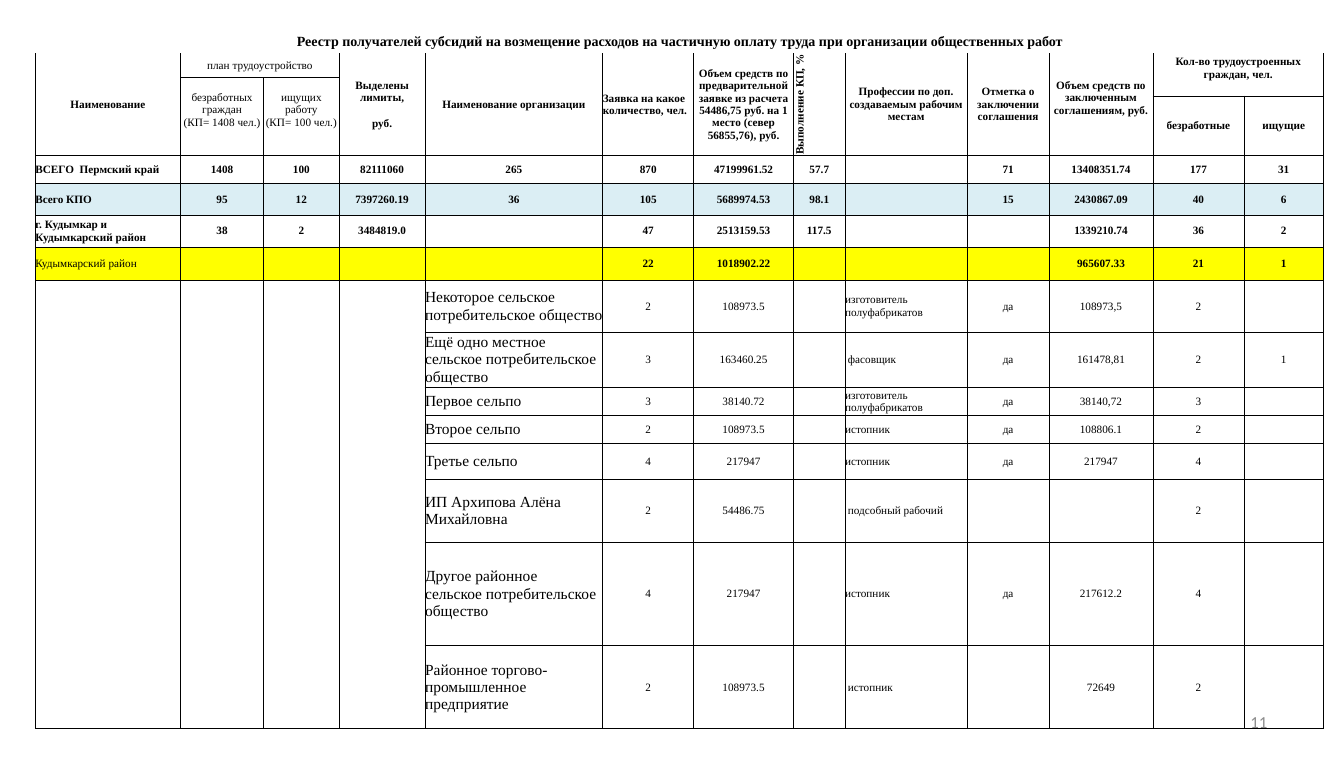
from lxml import etree
from pptx import Presentation, util as u
from pptx.dml.color import RGBColor
from pptx.enum import text
from pptx.oxml import ns

SLIDE = (13.31, 7.5)
TABLE_AT = (0.35, 0.29)
COLS = [1.44, .82, .75, .85, 1.76, .9, .99, .51, 1.21, .81, 1.03, .9, .79]
ROWS = [.24, .24, .18, .59, .28, .31, .32, .33,
        .51, .51, .28, .27, .36, .62, 1.03, .82]
TITLE = ("Реестр получателей субсидий на возмещение расходов на частичную "
         "оплату труда при организации общественных работ")
# row, column, rows spanned, columns spanned, wording, extra format
HEADER = [
    (0, 0, 1, 13, TITLE, {"size": 10}),
    (1, 0, 3, 1, "Наименование", {}),
    (1, 1, 1, 2, "план трудоустройство", {"bold": False}),
    (1, 3, 3, 1, "Выделены лимиты,\nруб.", {"gap": 9.3}),
    (1, 4, 3, 1, "Наименование организации", {}),
    (1, 5, 3, 1, "Заявка на какое количество, чел.", {"left": True}),
    (1, 6, 3, 1, "Объем средств по предварительной заявке из расчета "
                 "54486,75 руб. на 1 место (север 56855,76), руб.", {}),
    (1, 7, 3, 1, "Выполнение КП, %", {"vert": "vert270"}),
    (1, 8, 3, 1, "Профессии по доп. создаваемым рабочим местам", {}),
    (1, 9, 3, 1, "Отметка о заключении соглашения", {}),
    (1, 10, 3, 1, "Объем средств по заключенным соглашениям, руб.",
     {"below": .13}),
    (1, 11, 2, 2, "Кол-во трудоустроенных граждан, чел.", {"below": .13}),
    (2, 1, 2, 1, "безработных граждан\n(КП= 1408 чел.)",
     {"bold": False, "below": .13}),
    (2, 2, 2, 1, "ищущих работу\n(КП= 100 чел.)",
     {"bold": False, "below": .13}),
    (3, 11, 1, 1, "безработные", {}),
    (3, 12, 1, 1, "ищущие", {}),
]
TOTALS = [
    ("ВСЕГО  Пермский край", "1408", "100", "82111060", "265", "870",
     "47199961.52", "57.7", "", "71", "13408351.74", "177", "31"),
    ("Всего КПО", "95", "12", "7397260.19", "36", "105",
     "5689974.53", "98.1", "", "15", "2430867.09", "40", "6"),
    ("г. Кудымкар и Кудымкарский район", "38", "2", "3484819.0", "", "47",
     "2513159.53", "117.5", "", "", "1339210.74", "36", "2"),
    ("Кудымкарский район", "", "", "", "", "22",
     "1018902.22", "", "", "", "965607.33", "21", "1"),
]
EMPLOYERS = [
    ("Некоторое сельское потребительское общество", "2", "108973.5", "",
     "изготовитель полуфабрикатов", "да", "108973,5", "2", ""),
    ("Ещё одно местное сельское потребительское общество", "3", "163460.25",
     "", " фасовщик", "да", "161478,81", "2", "1"),
    ("Первое сельпо", "3", "38140.72", "",
     "изготовитель полуфабрикатов", "да", "38140,72", "3", ""),
    ("Второе сельпо", "2", "108973.5", "",
     "истопник", "да", "108806.1", "2", ""),
    ("Третье сельпо", "4", "217947", "",
     "истопник", "да", "217947", "4", ""),
    ("ИП Архипова Алёна Михайловна", "2", "54486.75", "",
     " подсобный рабочий", "", "", "2", ""),
    ("Другое районное\nсельское потребительское общество", "4", "217947", "",
     "истопник", "да", "217612.2", "4", ""),
    ("Районное торгово-промышленное предприятие", "2", "108973.5", "",
     " истопник", "", "72649", "2", ""),
]
FIRST_TOTAL, DISTRICT_ROW, FIRST_EMPLOYER = 4, 7, 8
NAME_COL, JOB_COL = 4, 8
ROW_FILLS = {5: "DBEEF4", DISTRICT_ROW: "FFFF00"}
NO_GRID_STYLE = "{2D5ABB26-0587-4C30-8999-92F81FD0307C}"


def color(value):
    return RGBColor.from_string(value)


def set_attrs(target, values):
    for name, value in values.items():
        setattr(target, name, value)


def style_run(r, size, bold=False, font="Times New Roman", ink="000000"):
    set_attrs(r.font, {"size": u.Pt(size), "bold": bold, "name": font})
    r.font.color.rgb = color(ink)


def write(cell, wording, size=8, bold=True, left=False, gap=0, below=0,
          vert=None):
    """Fill a cell; gap is points between paragraphs, below is bottom inset."""
    cell.text_frame.text = wording
    cell.margin_bottom = u.Inches(below)
    if vert:
        cell._tc.get_or_add_tcPr().set("vert", vert)
    for i, p in enumerate(cell.text_frame.paragraphs):
        p.alignment = text.PP_ALIGN.LEFT if left else text.PP_ALIGN.CENTER
        if i and gap:
            p.space_before = u.Pt(gap)
        for r in p.runs:
            style_run(r, size, bold)


def sides_of(row, col):
    """Name the edges of a cell that carry a line."""
    if row == 0:
        return ""
    if row == 1:
        return "LRB"
    if col < NAME_COL and row >= DISTRICT_ROW:
        return {DISTRICT_ROW: "LRT", len(ROWS) - 1: "LRB"}.get(row, "LR")
    return "LRTB"


def draw_borders(cell, sides):
    tcPr = cell._tc.get_or_add_tcPr()
    for side in sides:
        ln = etree.SubElement(tcPr, ns.qn("a:ln" + side), w=str(u.Pt(.5)))
        fill = etree.SubElement(ln, ns.qn("a:solidFill"))
        etree.SubElement(fill, ns.qn("a:srgbClr"), val="000000")


def add_page_number(s):
    box = s.shapes.add_textbox(*map(u.Inches, (9.54, 6.95, 3.11, .4)))
    tf = box.text_frame
    set_attrs(tf, {"word_wrap": True, "text": "11",
                   "vertical_anchor": text.MSO_ANCHOR.MIDDLE})
    p = tf.paragraphs[0]
    p.alignment = text.PP_ALIGN.RIGHT
    style_run(p.runs[0], 12, font="Calibri", ink="8C8C8C")


def add_register(s):
    frame = s.shapes.add_table(
        len(ROWS), len(COLS),
        *map(u.Inches, (*TABLE_AT, sum(COLS), sum(ROWS))))
    table = frame.table
    set_attrs(table, {"first_row": False, "horz_banding": False})
    table._tbl.tblPr.find(ns.qn("a:tableStyleId")).text = NO_GRID_STYLE
    for column, width in zip(table.columns, COLS):
        column.width = u.Inches(width)
    for row, height in zip(table.rows, ROWS):
        row.height = u.Inches(height)
    for row, col, down, across, _, _ in HEADER:
        if down * across > 1:
            table.cell(row, col).merge(
                table.cell(row + down - 1, col + across - 1))

    for row in range(len(ROWS)):
        for col in range(len(COLS)):
            cell = table.cell(row, col)
            set_attrs(cell, {"margin_left": 0, "margin_right": 0,
                             "margin_top": 0, "margin_bottom": 0,
                             "vertical_anchor": text.MSO_ANCHOR.MIDDLE})
            end = cell.text_frame.paragraphs[0]._p.get_or_add_endParaRPr()
            end.set("sz", "800")
            if not cell.is_spanned:
                draw_borders(cell, sides_of(row, col))
            if row in ROW_FILLS:
                cell.fill.solid()
                cell.fill.fore_color.rgb = color(ROW_FILLS[row])
            else:
                cell.fill.background()

    for row, col, _, _, wording, look in HEADER:
        write(table.cell(row, col), wording, **look)
    for row, values in enumerate(TOTALS, FIRST_TOTAL):
        for col, value in enumerate(values):
            if value:
                write(table.cell(row, col), value, left=col == 0,
                      bold=(row, col) != (DISTRICT_ROW, 0))
    for row, values in enumerate(EMPLOYERS, FIRST_EMPLOYER):
        for col, value in enumerate(values, NAME_COL):
            if value:
                write(table.cell(row, col), value, bold=False,
                      size=11 if col == NAME_COL else 8,
                      left=col in (NAME_COL, JOB_COL))


def main():
    prs = Presentation()
    prs.slide_width, prs.slide_height = map(u.Inches, SLIDE)
    s = prs.slides.add_slide(prs.slide_layouts[6])
    add_page_number(s)
    add_register(s)
    prs.save("out.pptx")


if __name__ == "__main__":
    main()
